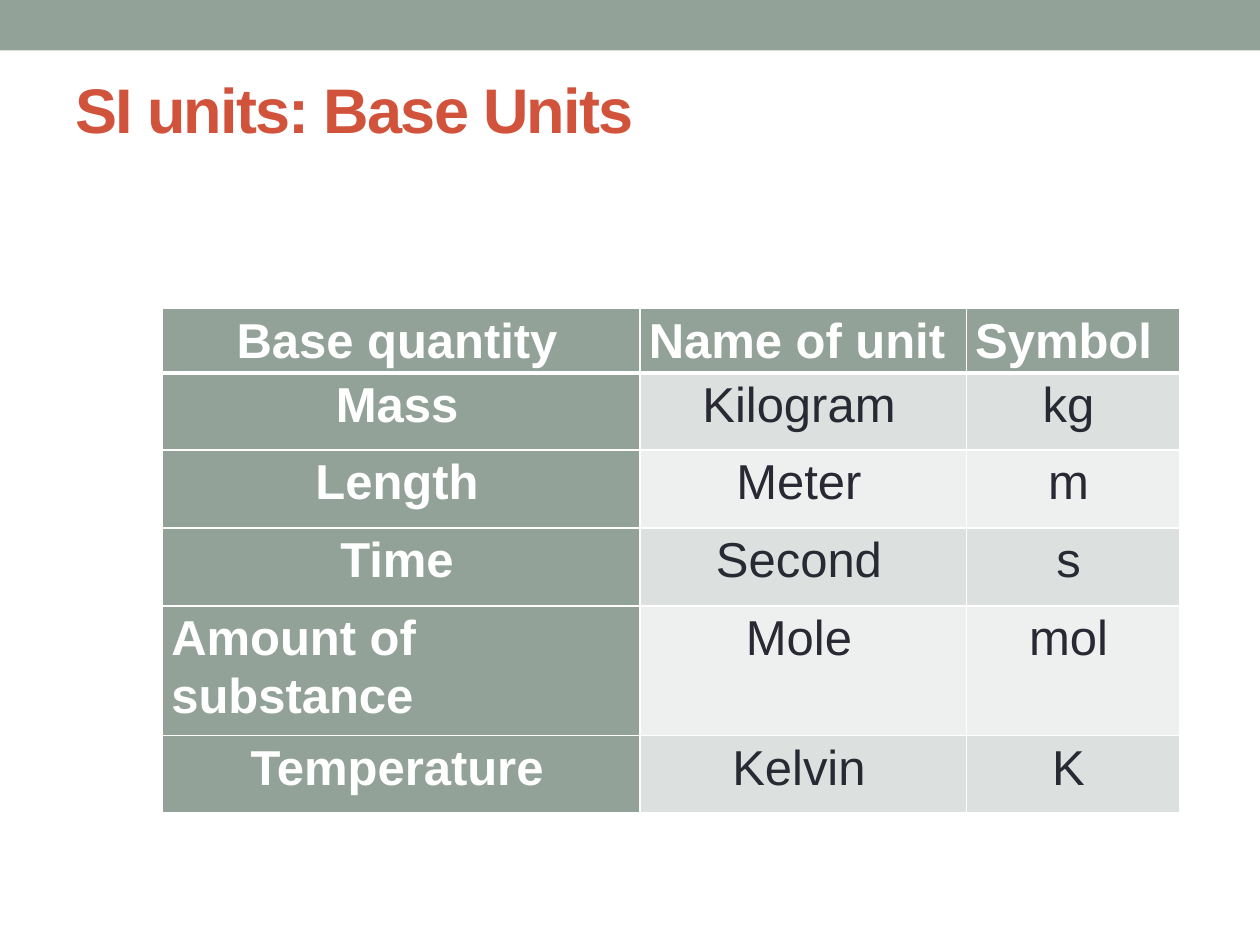
"""Build a slide with a table of the SI base units."""
from dataclasses import dataclass

import pptx
import pptx.dml.color
import pptx.enum.shapes
import pptx.enum.text
import pptx.oxml
import pptx.oxml.ns
import pptx.util

Inches = pptx.util.Inches
Pt = pptx.util.Pt
RGBColor = pptx.dml.color.RGBColor
Align = pptx.enum.text.PP_ALIGN

SAGE = RGBColor(0x93, 0xA2, 0x99)
RUST = RGBColor(0xD2, 0x53, 0x3C)
INK = RGBColor(0x29, 0x29, 0x34)
WHITE = RGBColor(0xFF, 0xFF, 0xFF)
BANDS = (RGBColor(0xDC, 0xE0, 0xDE), RGBColor(0xEE, 0xF0, 0xEF))
FONT = "Arial"
COLUMN_WIDTHS = (3.79, 2.59, 1.69)


@dataclass(frozen=True)
class UnitRow:
    texts: tuple[str, str, str]
    height: float
    aligns: tuple = (Align.CENTER, Align.CENTER, Align.CENTER)


ROWS = (
    UnitRow(("Base quantity ", "Name of unit", "Symbol "), 0.5,
            (Align.CENTER, Align.LEFT, Align.JUSTIFY)),
    UnitRow(("Mass ", "Kilogram ", "kg "), 0.61),
    UnitRow(("Length ", "Meter ", "m "), 0.62),
    UnitRow(("Time ", "Second ", "s "), 0.62),
    UnitRow(("Amount of substance", "Mole ", "mol "), 1.03,
            (Align.LEFT, Align.CENTER, Align.CENTER)),
    UnitRow(("Temperature ", "Kelvin ", "K "), 0.61),
)


def add_span(para, text: str, size: float, color: RGBColor, bold: bool):
    span = para.add_run()
    span.text = text
    span.font.name = FONT
    span.font.size = Pt(size)
    span.font.bold = bold
    span.font.color.rgb = color
    return span


def add_banner(page) -> None:
    banner = page.shapes.add_shape(
        pptx.enum.shapes.MSO_SHAPE.RECTANGLE, 0, 0, Inches(10), Inches(0.4))
    banner.shadow.inherit = False
    banner.fill.solid()
    banner.fill.fore_color.rgb = SAGE
    banner.line.fill.background()


def add_title(page, text: str) -> None:
    box = page.shapes.add_textbox(Inches(0.5), Inches(0.56), Inches(9), Inches(1.08))
    frame = box.text_frame
    frame.word_wrap = True
    frame.margin_top = 0
    span = add_span(frame.paragraphs[0], text, 36, RUST, True)
    span.font._element.set("spc", "-100")


def set_borders(cell, top: float, bottom: float) -> None:
    properties = cell._tc.get_or_add_tcPr()
    sides = (("L", 1), ("R", 1), ("T", top), ("B", bottom))
    for index, (side, width) in enumerate(sides):
        border = pptx.oxml.parse_xml(
            f'<a:ln{side} {pptx.oxml.ns.nsdecls("a")} w="{Pt(width)}">'
            f'<a:solidFill><a:srgbClr val="{WHITE}"/></a:solidFill></a:ln{side}>')
        properties.insert(index, border)


def fill_cell(cell, text: str, align, row: int, column: int) -> None:
    heading = row == 0 or column == 0
    cell.margin_left, cell.margin_right = Inches(0.07), Inches(0.03)
    cell.margin_top, cell.margin_bottom = Inches(0.01), 0
    cell.fill.solid()
    cell.fill.fore_color.rgb = SAGE if heading else BANDS[(row - 1) % 2]
    set_borders(cell, 3 if row == 1 else 1, 3 if row == 0 else 1)
    para = cell.text_frame.paragraphs[0]
    para.alignment = align
    para.line_spacing = 1.07
    add_span(para, text, 28, WHITE if heading else INK, heading)


def add_unit_table(page) -> None:
    table = page.shapes.add_table(
        len(ROWS), len(COLUMN_WIDTHS), Inches(1.29), Inches(2.45),
        Inches(sum(COLUMN_WIDTHS)), Inches(sum(row.height for row in ROWS))).table
    for column, width in zip(table.columns, COLUMN_WIDTHS):
        column.width = Inches(width)
    for row_index, row in enumerate(ROWS):
        table.rows[row_index].height = Inches(row.height)
        for column_index, (text, align) in enumerate(zip(row.texts, row.aligns)):
            fill_cell(table.cell(row_index, column_index), text, align,
                      row_index, column_index)


def main() -> None:
    deck = pptx.Presentation()
    deck.slide_width, deck.slide_height = Inches(10), Inches(7.5)
    page = deck.slides.add_slide(deck.slide_layouts[6])
    add_banner(page)
    add_title(page, "SI units: Base Units")
    add_unit_table(page)
    deck.save("out.pptx")


if __name__ == "__main__":
    main()
